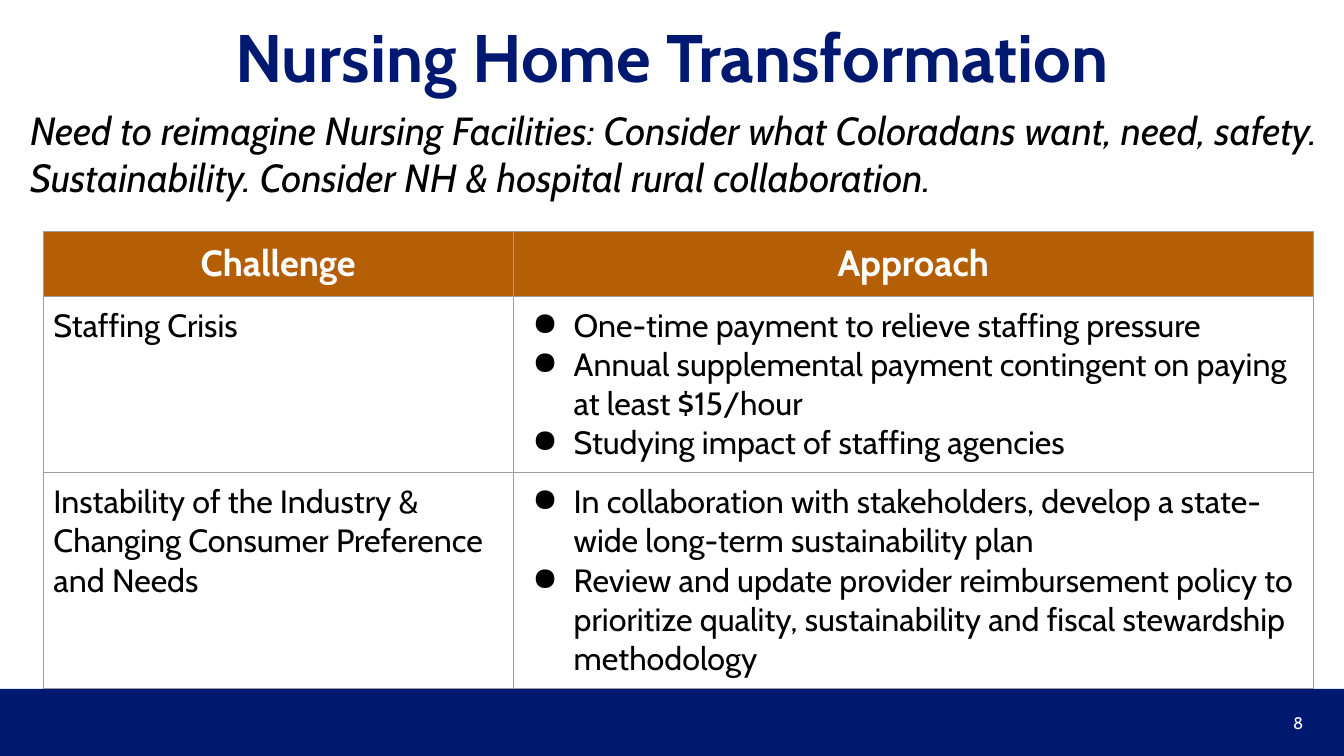
import pptx
import pptx.dml.color
import pptx.enum.shapes
import pptx.enum.text
import pptx.oxml
import pptx.oxml.ns
import pptx.util
from dataclasses import dataclass

Pt = pptx.util.Pt
ALIGN = pptx.enum.text.PP_ALIGN
ANCHOR = pptx.enum.text.MSO_ANCHOR

ROWS = [
    ("Staffing Crisis", [
        "One-time payment to relieve staffing pressure",
        "Annual supplemental payment contingent on paying at least $15/hour",
        "Studying impact of staffing agencies",
    ]),
    ("Instability of the Industry & Changing Consumer Preference and Needs", [
        "In collaboration with stakeholders, develop a state-wide long-term sustainability plan",
        "Review and update provider reimbursement policy to prioritize quality, "
        "sustainability and fiscal stewardship methodology",
    ]),
]


@dataclass(frozen=True)
class Theme:
    font: str = "Cabin"
    navy: str = "001970"
    orange: str = "B45F06"
    white: str = "FFFFFF"
    black: str = "000000"
    grid: str = "9E9E9E"
    title: float = 48
    lead: float = 28
    header: float = 26
    body: float = 23
    number: float = 12


def rgb(value):
    return pptx.dml.color.RGBColor.from_string(value)


def add_xml(parent, tag, attributes="", content=""):
    namespace = pptx.oxml.ns.nsdecls("a")
    parent.append(pptx.oxml.parse_xml(
        f"<a:{tag} {namespace} {attributes}>{content}</a:{tag}>"))


class SlideBuilder:
    def __init__(self, deck, theme):
        self.theme = theme
        self.slide = deck.slides.add_slide(deck.slide_layouts[5])

    def fill_frame(self, frame, texts, size, color, align=ALIGN.LEFT, bold=False,
                   italic=False, bullets=False, spacing=None):
        """Put one styled paragraph per text into the frame."""
        for index, text in enumerate(texts):
            paragraph = frame.paragraphs[0] if index == 0 else frame.add_paragraph()
            paragraph.text = text
            paragraph.alignment = align
            if spacing:
                paragraph.line_spacing = spacing
            if bullets:
                self.add_bullet(paragraph, color)
            font = paragraph.font
            font.name, font.size = self.theme.font, Pt(size)
            font.bold, font.italic = bold, italic
            font.color.rgb = rgb(color)

    def add_bullet(self, paragraph, color):
        properties = paragraph._p.get_or_add_pPr()
        properties.set("marL", str(Pt(36)))
        properties.set("indent", str(Pt(-29.5)))
        add_xml(properties, "buClr", content=f'<a:srgbClr val="{color}"/>')
        add_xml(properties, "buChar", 'char="●"')

    def set_frame(self, frame, anchor, inset):
        """Wrap the text, fix the box size and set the insets."""
        frame.word_wrap = True
        frame.auto_size = pptx.enum.text.MSO_AUTO_SIZE.NONE
        frame.vertical_anchor = anchor
        frame.margin_left = frame.margin_right = Pt(7.2)
        frame.margin_top = frame.margin_bottom = Pt(inset)

    def title(self, text, left, top, width, height):
        heading = self.slide.shapes.title
        heading.left, heading.top = Pt(left), Pt(top)
        heading.width, heading.height = Pt(width), Pt(height)
        self.set_frame(heading.text_frame, ANCHOR.MIDDLE, 3.6)
        self.fill_frame(heading.text_frame, [text], self.theme.title, self.theme.navy,
                        ALIGN.CENTER, bold=True, spacing=0.9)

    def bar(self, left, top, width, height):
        band = self.slide.shapes.add_shape(
            pptx.enum.shapes.MSO_SHAPE.RECTANGLE, Pt(left), Pt(top), Pt(width), Pt(height))
        band.shadow.inherit = False
        band.fill.solid()
        band.fill.fore_color.rgb = rgb(self.theme.navy)
        band.line.fill.background()

    def text(self, text, left, top, width, height, size, color,
             anchor=ANCHOR.TOP, inset=7.2, **style):
        box = self.slide.shapes.add_textbox(Pt(left), Pt(top), Pt(width), Pt(height))
        self.set_frame(box.text_frame, anchor, inset)
        self.fill_frame(box.text_frame, [text], size, color, **style)

    def table(self, headers, rows, left, top, widths, heights):
        theme = self.theme
        table = self.slide.shapes.add_table(
            len(rows) + 1, len(headers), Pt(left), Pt(top),
            Pt(sum(widths)), Pt(sum(heights))).table
        table.horz_banding = False
        for column, width in zip(table.columns, widths):
            column.width = Pt(width)
        for row, height in zip(table.rows, heights):
            row.height = Pt(height)
        for column, header in enumerate(headers):
            self.cell(table.cell(0, column), [header], theme.header, theme.white,
                      fill=theme.orange, align=ALIGN.CENTER, bold=True)
        for row, (challenge, approaches) in enumerate(rows, 1):
            self.cell(table.cell(row, 0), [challenge], theme.body, theme.black)
            self.cell(table.cell(row, 1), approaches, theme.body, theme.black, bullets=True)

    def cell(self, cell, texts, size, color, fill=None, **style):
        cell.margin_left = cell.margin_right = Pt(7.2)
        cell.margin_top = cell.margin_bottom = Pt(7.2)
        properties = cell._tc.get_or_add_tcPr()
        for side in "LRTB":
            add_xml(properties, f"ln{side}", f'w="{Pt(0.75)}"',
                    f'<a:solidFill><a:srgbClr val="{self.theme.grid}"/></a:solidFill>')
        if fill:
            cell.fill.solid()
            cell.fill.fore_color.rgb = rgb(fill)
        else:
            cell.fill.background()
        self.fill_frame(cell.text_frame, texts, size, color, **style)


def main():
    theme = Theme()
    deck = pptx.Presentation()
    deck.slide_width, deck.slide_height = Pt(960), Pt(540)
    page = SlideBuilder(deck, theme)
    page.bar(0, 492, 960, 48)
    page.title("Nursing Home Transformation", 14.4, 3.6, 931, 80)
    page.text("8", 722, 502, 216, 28.8, theme.number, theme.white,
              ANCHOR.MIDDLE, 3.6, align=ALIGN.RIGHT)
    page.text("Need to reimagine Nursing Facilities: Consider what Coloradans want, need, "
              "safety. Sustainability. Consider NH & hospital rural collaboration.",
              14.4, 69, 945.6, 82, theme.lead, theme.black, italic=True)
    page.table(["Challenge", "Approach"], ROWS, 31, 165.4, [335.6, 571.6], [45.6, 124.2, 152.6])
    deck.save("out.pptx")


if __name__ == "__main__":
    main()
